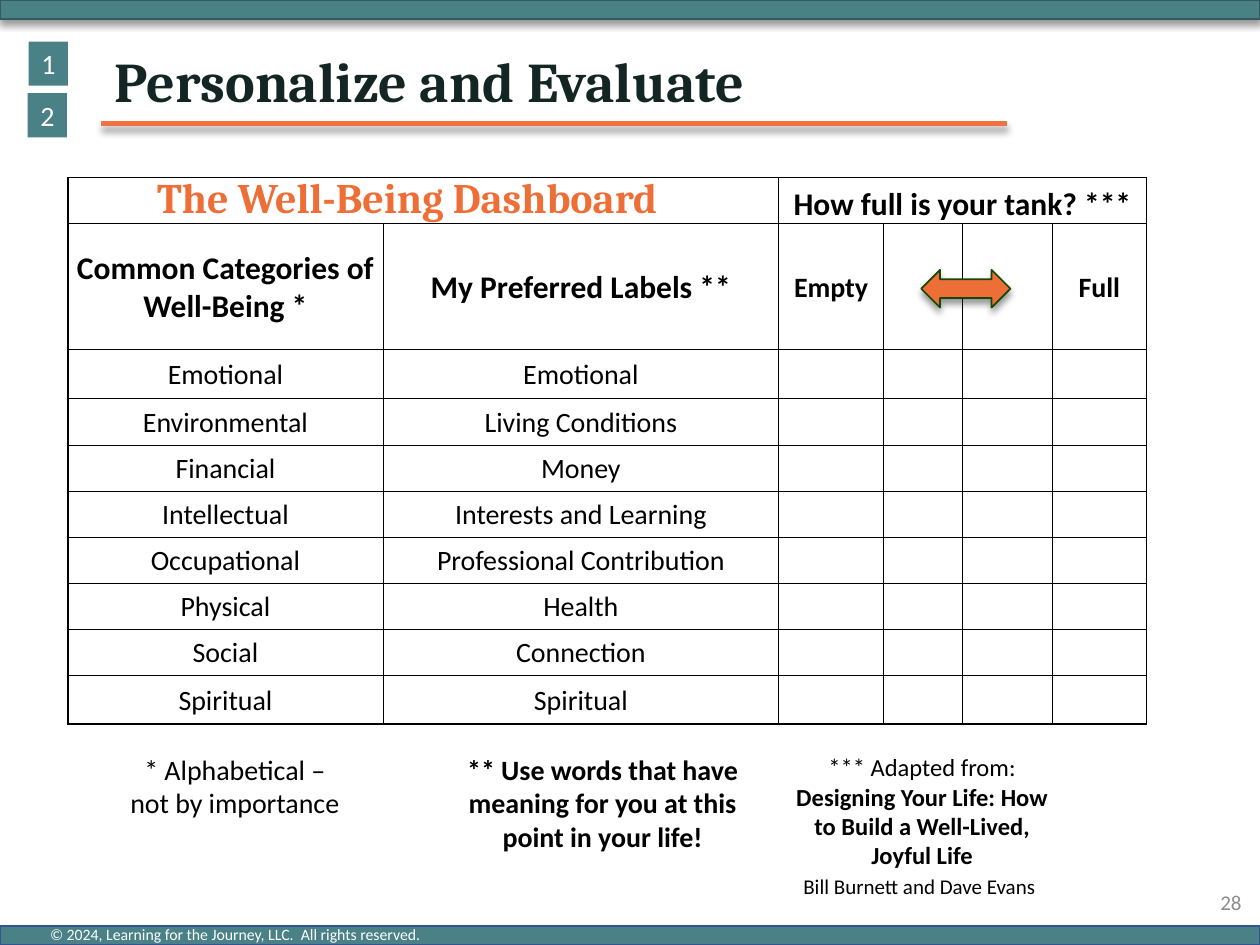
from lxml import etree
from pptx import Presentation
from pptx.dml.color import RGBColor
from pptx.enum.shapes import MSO_CONNECTOR, MSO_SHAPE
from pptx.enum.text import MSO_ANCHOR, PP_ALIGN
from pptx.oxml.ns import qn
from pptx.util import Cm, Pt

LEFT, CENTER, RIGHT = PP_ALIGN.LEFT, PP_ALIGN.CENTER, PP_ALIGN.RIGHT
TOP, MIDDLE, BOTTOM = MSO_ANCHOR.TOP, MSO_ANCHOR.MIDDLE, MSO_ANCHOR.BOTTOM
RECTANGLE, DOUBLE_ARROW = MSO_SHAPE.RECTANGLE, MSO_SHAPE.LEFT_RIGHT_ARROW
STRAIGHT = MSO_CONNECTOR.STRAIGHT

COLORS = {
    "teal": "498187", "teal_edge": "335A5E", "blue_edge": "325491",
    "rule": "F27141", "orange": "ED6F37", "green_edge": "164805",
    "title": "132623", "gray": "8C8C8C", "black": "000000", "white": "FFFFFF",
}


def color(name):
    return RGBColor.from_string(COLORS[name])


def add_span(para, text, size=16, font="Calibri", ink="black", bold=False):
    span = para.add_run()
    span.text = text
    span.font.size = Pt(size)
    span.font.name = font
    span.font.bold = bold
    span.font.color.rgb = color(ink)


def add_shadow(shape):
    properties = shape._element.spPr
    for old in properties.findall(qn("a:effectLst")):
        properties.remove(old)
    effects = etree.SubElement(properties, qn("a:effectLst"))
    shadow = etree.SubElement(effects, qn("a:outerShdw"), blurRad=str(Pt(4)),
                              dist=str(Pt(3)), dir="5400000", rotWithShape="0")
    tint = etree.SubElement(shadow, qn("a:srgbClr"), val=COLORS["black"])
    etree.SubElement(tint, qn("a:alpha"), val="40000")


def set_border(cell, side, width):
    """Draw one side of a cell; a width of 0 leaves it blank."""
    line = etree.SubElement(cell._tc.get_or_add_tcPr(), qn("a:ln" + side),
                            w=str(Pt(width)))
    if width:
        fill = etree.SubElement(line, qn("a:solidFill"))
        etree.SubElement(fill, qn("a:srgbClr"), val=COLORS["black"])
    else:
        etree.SubElement(line, qn("a:noFill"))


class Page:
    def __init__(self, deck):
        self.shapes = deck.slides.add_slide(deck.slide_layouts[6]).shapes

    def shape(self, kind, left, top, width, height, fill, edge=None):
        shape = self.shapes.add_shape(kind, Cm(left), Cm(top), Cm(width), Cm(height))
        shape.shadow.inherit = False
        shape.fill.solid()
        shape.fill.fore_color.rgb = color(fill)
        if edge:
            shape.line.color.rgb = color(edge)
            shape.line.width = Pt(1)
            add_shadow(shape)
        else:
            shape.line.fill.background()
        return shape

    def rule(self, left, right, y):
        line = self.shapes.add_connector(STRAIGHT, Cm(left), Cm(y), Cm(right), Cm(y))
        line.line.color.rgb = color("rule")
        line.line.width = Pt(3)
        add_shadow(line)

    def text(self, left, top, width, height, *paragraphs, align=LEFT,
             anchor=TOP, wrap=True, spacing=None):
        """Each paragraph is a list of (text, format) pairs."""
        box = self.shapes.add_textbox(Cm(left), Cm(top), Cm(width), Cm(height))
        frame = box.text_frame
        frame.word_wrap = wrap
        frame.vertical_anchor = anchor
        for index, spans in enumerate(paragraphs):
            para = frame.add_paragraph() if index else frame.paragraphs[0]
            para.alignment = align
            if spacing:
                para.line_spacing = spacing
            for text, style in spans:
                add_span(para, text, **style)

    def badge(self, left, top, label):
        square = self.shape(RECTANGLE, left, top, 0.79, 0.89, "teal")
        square.text_frame.word_wrap = False
        para = square.text_frame.paragraphs[0]
        para.alignment = CENTER
        add_span(para, label, ink="white")

    def table(self, left, top, widths, heights, rows):
        table = self.shapes.add_table(len(heights), len(widths), Cm(left), Cm(top),
                                      Cm(sum(widths)), Cm(sum(heights))).table
        table.first_row = table.horz_banding = False
        for column, width in zip(table.columns, widths):
            column.width = Cm(width)
        for row, height in zip(table.rows, heights):
            row.height = Cm(height)
        last_row, last_column = len(heights) - 1, len(widths) - 1
        for r, row in enumerate(rows):
            for c, (text, style) in enumerate(row):
                cell = table.cell(r, c)
                cell.margin_left = cell.margin_right = cell.margin_top = Cm(0.03)
                cell.margin_bottom = 0
                cell.vertical_anchor = MIDDLE if r else BOTTOM
                para = cell.text_frame.paragraphs[0]
                para.alignment = CENTER
                if text:
                    add_span(para, text, **style)
                else:
                    para.font.size = Pt(16)
                outer = {"L": c == 0, "R": c == last_column,
                         "T": r == 0, "B": r == last_row}
                for side, is_outer in outer.items():
                    open_side = r == 0 and (c, side) in ((0, "R"), (1, "L"))
                    set_border(cell, side, 0 if open_side else 1 if is_outer else 0.5)
                cell.fill.background()
        table.cell(0, 2).merge(table.cell(0, last_column))


def main():
    deck = Presentation()
    deck.slide_width, deck.slide_height = Cm(25.4), Cm(19.05)
    page = Page(deck)

    # Top and bottom bars, footer
    page.shape(RECTANGLE, 0, 0, 25.4, 0.38, "teal", "teal_edge")
    page.shape(RECTANGLE, 0, 18.67, 25.4, 0.38, "teal", "blue_edge")
    page.text(0.76, 18.52, 8.08, 0.64,
              [("© 2024, Learning for the Journey, LLC.  All rights reserved.",
                dict(size=9, ink="white"))], wrap=False)
    page.text(19.56, 17.68, 5.72, 1.02, [("28", dict(size=12, ink="gray"))],
              align=RIGHT, anchor=MIDDLE)

    # Title
    page.rule(2.03, 20.29, 2.49)
    page.text(2.06, 0.97, 17.42, 1.47,
              [("Personalize and Evaluate",
                dict(size=32, font="Cambria", ink="title", bold=True))],
              anchor=MIDDLE, spacing=0.9)

    # Dashboard table
    heading, scale = dict(size=18, bold=True), dict(bold=True)
    blank = ("", {})
    labels = [
        ("Emotional", "Emotional"), ("Environmental", "Living Conditions"),
        ("Financial", "Money"), ("Intellectual", "Interests and Learning"),
        ("Occupational", "Professional Contribution"), ("Physical", "Health"),
        ("Social", "Connection"), ("Spiritual", "Spiritual"),
    ]
    rows = [
        [blank, blank, ("How full is your tank? ***", heading), blank, blank, blank],
        [("Common Categories of Well-Being *", heading),
         ("My Preferred Labels **", heading),
         ("Empty", scale), blank, blank, ("Full", scale)],
    ]
    rows += [[(common, {}), (own, {})] + [blank] * 4 for common, own in labels]
    page.table(1.37, 3.58, [6.35, 7.98, 2.11, 1.6, 1.8, 1.9],
               [0.93, 2.54, 0.99] + [0.93] * 6 + [0.97], rows)
    page.shape(DOUBLE_ARROW, 18.57, 5.44, 1.8, 0.76, "orange", "green_edge")
    page.text(2.92, 3.4, 11.79, 1.27,
              [("The Well-Being Dashboard",
                dict(size=24, font="Cambria", ink="orange", bold=True))],
              anchor=MIDDLE, spacing=0.9)

    # Footnotes
    page.text(2.21, 15.04, 5.05, 1.63,
              [("* Alphabetical – not by importance", {})], align=CENTER)
    page.text(9.04, 15.04, 6.22, 2.31,
              [("** Use words that have meaning for you at this point in your life!",
                dict(bold=True))], align=CENTER)
    page.text(15.54, 15.04, 6.1, 3.25,
              [("*** Adapted from: ", dict(size=14)),
               ("Designing Your Life: How to Build a Well-Lived, Joyful Life",
                dict(size=14, bold=True))],
              [("Bill Burnett and Dave Evans", dict(size=12)),
               (" ", dict(size=14))], align=CENTER)

    # Step badges
    page.badge(0.58, 0.84, "1")
    page.badge(0.56, 1.88, "2")

    deck.save("out.pptx")


if __name__ == "__main__":
    main()
